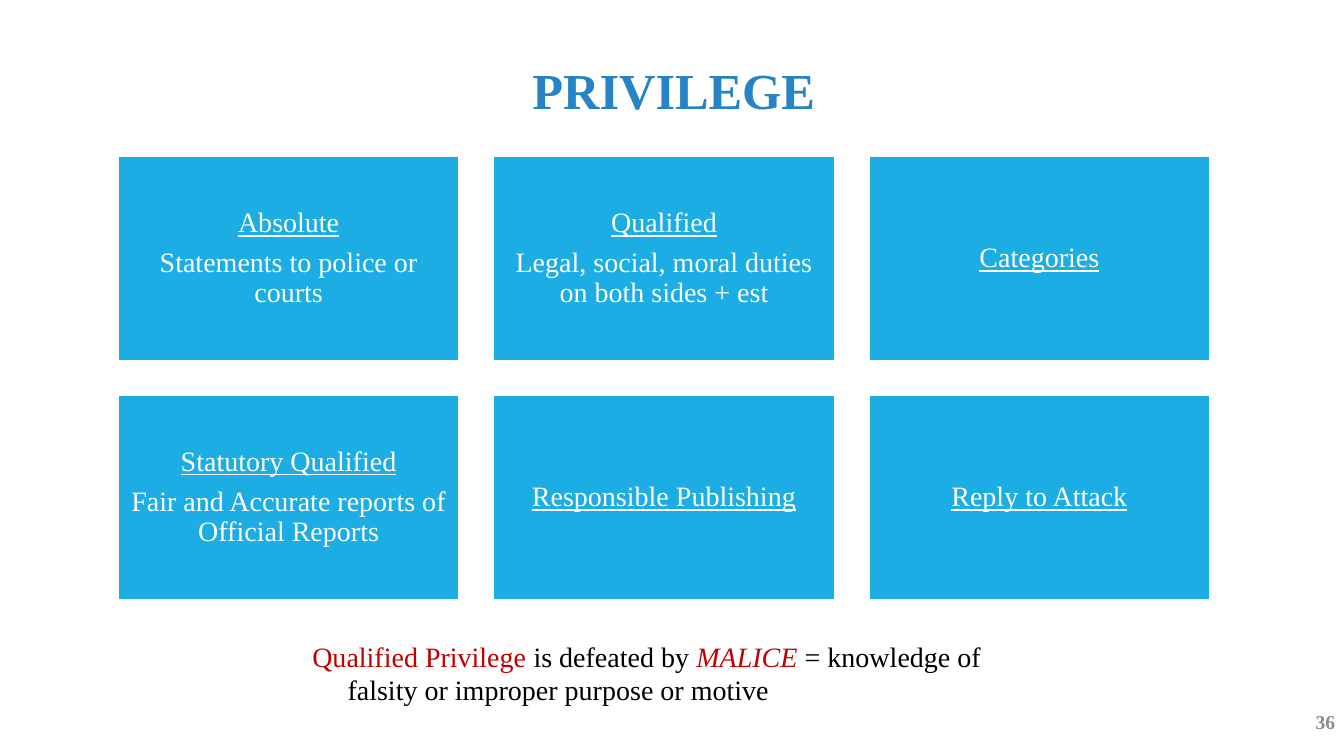
from typing import NamedTuple

from pptx import Presentation
from pptx import util as u
from pptx.dml.color import RGBColor
from pptx.enum import shapes, text

FONT = "Times New Roman"
TITLE_BLUE = RGBColor(0x26, 0x83, 0xC6)
CARD_BLUE = RGBColor(0x1C, 0xAD, 0xE4)
RED = RGBColor(0xC0, 0x00, 0x00)
GREY = RGBColor(0x8C, 0x8C, 0x8C)
BLACK = RGBColor(0, 0, 0)
WHITE = RGBColor(0xFF, 0xFF, 0xFF)

COLUMNS = 3
CARD_LEFT, CARD_TOP = 2.97, 3.94
CARD_WIDTH, CARD_HEIGHT = 8.61, 5.16
COLUMN_STEP, ROW_STEP = 9.46, 6.02


class Privilege(NamedTuple):
    heading: str
    detail: str = ""


class Phrase(NamedTuple):
    wording: str
    color: RGBColor
    italic: bool = False


PRIVILEGES = [
    Privilege("Absolute", "Statements to police or courts"),
    Privilege("Qualified", "Legal, social, moral duties on both sides + est"),
    Privilege("Categories"),
    Privilege("Statutory Qualified", "Fair and Accurate reports of Official Reports"),
    Privilege("Responsible Publishing"),
    Privilege("Reply to Attack"),
]

MALICE_RULE = [
    Phrase("Qualified Privilege ", RED),
    Phrase("is defeated by ", BLACK),
    Phrase("MALICE", RED, italic=True),
    Phrase(" = knowledge of falsity or improper purpose or motive", BLACK),
]


def set_font(font, size: float, color: RGBColor, bold: bool = False) -> None:
    font.name = FONT
    font.size = u.Pt(size)
    font.bold = bold
    font.color.rgb = color


def set_margins(frame, horizontal: float, vertical: float) -> None:
    frame.margin_left = frame.margin_right = u.Cm(horizontal)
    frame.margin_top = frame.margin_bottom = u.Cm(vertical)


def add_text_frame(slide, left: float, top: float, width: float, height: float):
    box = slide.shapes.add_textbox(u.Cm(left), u.Cm(top), u.Cm(width), u.Cm(height))
    box.text_frame.word_wrap = True
    return box.text_frame


def add_title(slide) -> None:
    frame = add_text_frame(slide, 5.94, 1.5, 22.4, 1.98)
    set_margins(frame, 0, 0)
    title = frame.paragraphs[0]
    title.text = "PRIVILEGE "
    title.alignment = text.PP_ALIGN.CENTER
    set_font(title.font, 36, TITLE_BLUE, bold=True)


def add_card(slide, privilege: Privilege, column: int, row: int) -> None:
    card = slide.shapes.add_shape(
        shapes.MSO_SHAPE.RECTANGLE,
        u.Cm(CARD_LEFT + column * COLUMN_STEP),
        u.Cm(CARD_TOP + row * ROW_STEP),
        u.Cm(CARD_WIDTH),
        u.Cm(CARD_HEIGHT),
    )
    card.shadow.inherit = False
    card.fill.solid()
    card.fill.fore_color.rgb = CARD_BLUE
    card.line.color.rgb = WHITE
    card.line.width = u.Pt(1.5)

    frame = card.text_frame
    frame.word_wrap = True
    frame.vertical_anchor = text.MSO_ANCHOR.MIDDLE
    set_margins(frame, 0.2, 0.2)
    for index, wording in enumerate(filter(None, privilege)):
        paragraph = frame.add_paragraph() if index else frame.paragraphs[0]
        paragraph.text = wording
        paragraph.alignment = text.PP_ALIGN.CENTER
        paragraph.line_spacing = 0.9
        paragraph.space_after = u.Pt(7)
        set_font(paragraph.font, 20, WHITE)
        paragraph.font.underline = index == 0


def add_malice_rule(slide) -> None:
    frame = add_text_frame(slide, 7.54, 15.98, 17.58, 2.2)
    set_margins(frame, 0.25, 0.13)
    rule = frame.paragraphs[0]
    properties = rule._p.get_or_add_pPr()
    properties.set("marL", str(u.Cm(0.97)))
    properties.set("indent", str(u.Cm(-0.89)))
    for phrase in MALICE_RULE:
        run = rule.add_run()
        run.text = phrase.wording
        set_font(run.font, 20, phrase.color)
        run.font.italic = phrase.italic


def add_page_number(slide) -> None:
    frame = add_text_frame(slide, 31.95, 17.68, 1.7, 1.02)
    set_margins(frame, 0, 0)
    frame.vertical_anchor = text.MSO_ANCHOR.MIDDLE
    number = frame.paragraphs[0]
    number.text = "36"
    number.alignment = text.PP_ALIGN.RIGHT
    set_font(number.font, 14, GREY, bold=True)


def main() -> None:
    presentation = Presentation()
    presentation.slide_width = u.Cm(33.87)
    presentation.slide_height = u.Cm(19.05)
    slide = presentation.slides.add_slide(presentation.slide_layouts[6])

    add_title(slide)
    add_malice_rule(slide)
    for index, privilege in enumerate(PRIVILEGES):
        row, column = divmod(index, COLUMNS)
        add_card(slide, privilege, column, row)
    add_page_number(slide)

    presentation.save("out.pptx")


if __name__ == "__main__":
    main()
